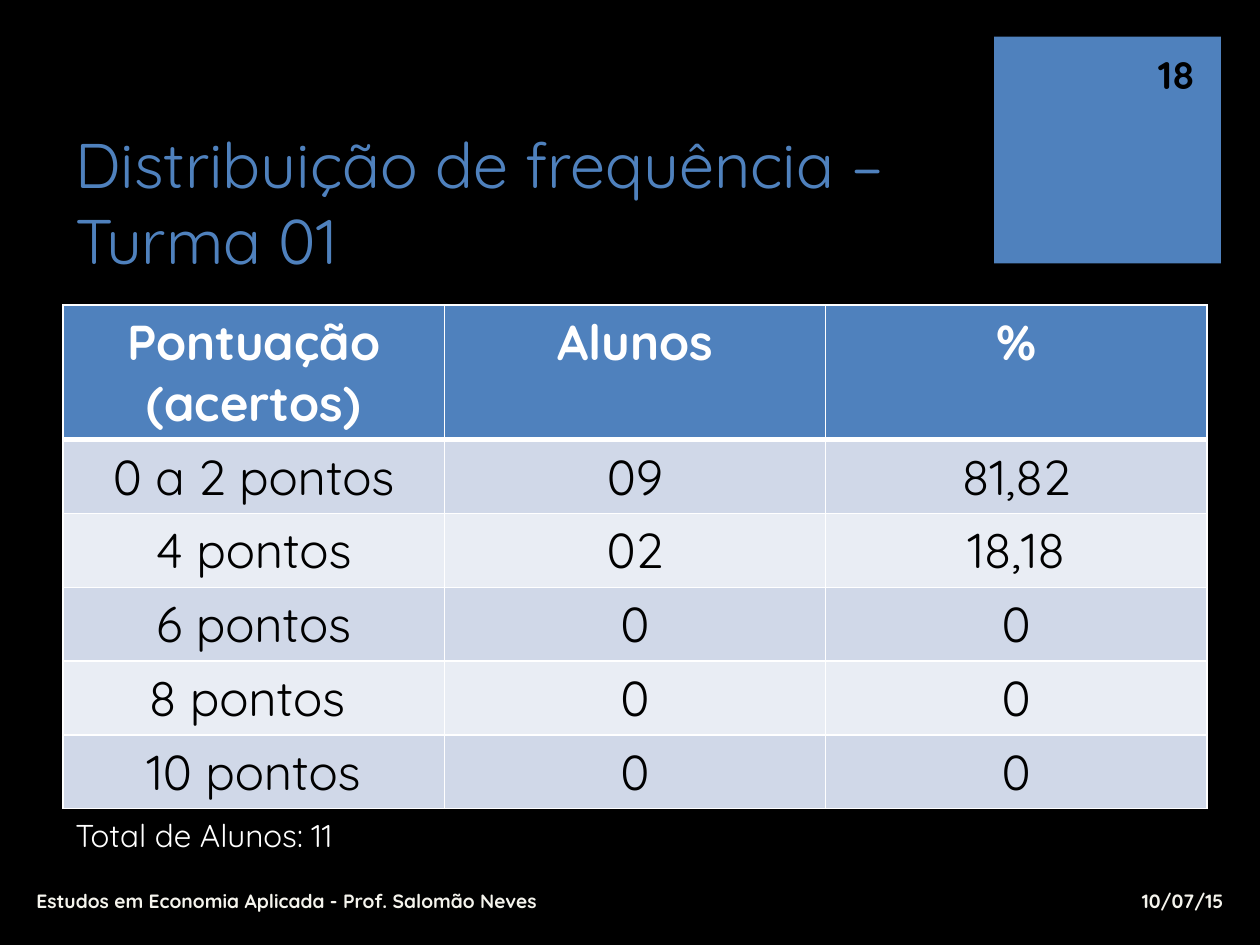
"""Build the slide with the frequency table of class 01."""
from lxml import etree
from pptx import Presentation
from pptx.dml.color import RGBColor
from pptx.enum.shapes import MSO_SHAPE
from pptx.enum.text import MSO_ANCHOR, MSO_AUTO_SIZE, PP_ALIGN
from pptx.oxml.ns import qn
from pptx.util import Inches, Pt

LEFT, MID, RIGHT = PP_ALIGN.LEFT, PP_ALIGN.CENTER, PP_ALIGN.RIGHT
TOP, CENTER, BOTTOM = MSO_ANCHOR.TOP, MSO_ANCHOR.MIDDLE, MSO_ANCHOR.BOTTOM
RECT, FIXED = MSO_SHAPE.RECTANGLE, MSO_AUTO_SIZE.NONE
FONT = "Quicksand"
BLUE, WHITE, BLACK, CREAM = "4F81BD", "FFFFFF", "000000", "F5F4ED"
BANDS = ["D0D8E8", "E9EDF4"]

TITLE = "Distribuição de frequência – Turma 01"
ROWS = [
    ("Pontuação (acertos)", "Alunos", "%"),
    ("0 a 2 pontos", "09", "81,82"),
    ("4 pontos", "02", "18,18"),
    ("6 pontos", "0", "0"),
    ("8 pontos ", "0", "0"),
    ("10 pontos", "0", "0"),
]
SMALL = dict(size=11, color=CREAM, bold=True, anchor=CENTER)
NOTES = [
    ("10/07/15", (7.89, 6.95, 1.92, 0.4), dict(SMALL, align=RIGHT)),
    ("Estudos em Economia Aplicada - Prof. Salomão Neves",
     (0.19, 6.95, 6.57, 0.4), SMALL),
    ("18", (9.03, 0.39, 0.55, 0.4),
     dict(SMALL, size=22, color=BLACK, align=RIGHT)),
    ("Total de Alunos: 11", (0.5, 6.43, 2.48, 0.4),
     dict(size=18, color=WHITE)),
]


def paint(fill, color):
    """Give a fill one solid colour."""
    fill.solid()
    fill.fore_color.rgb = RGBColor.from_string(color)


def write(frame, text, size=18, color=WHITE, bold=False, align=LEFT, anchor=TOP):
    """Write one formatted paragraph into a text frame."""
    frame.word_wrap = True
    frame.vertical_anchor = anchor
    para = frame.paragraphs[0]
    para.alignment = align
    run = para.add_run()
    run.text = text
    font = run.font
    font.name, font.size, font.bold = FONT, Pt(size), bold
    font.color.rgb = RGBColor.from_string(color)


def edge(cell, low, high):
    """Draw white borders around a cell, with widths for top and bottom."""
    props = cell._tc.get_or_add_tcPr()
    for spot, (side, width) in enumerate(zip("LRTB", (1, 1, high, low))):
        line = etree.Element(qn(f"a:ln{side}"), w=str(Pt(width)))
        solid = etree.SubElement(line, qn("a:solidFill"))
        etree.SubElement(solid, qn("a:srgbClr"), val=WHITE)
        props.insert(spot, line)


def add_grid(slide):
    """Add the frequency table."""
    place = [Inches(n) for n in (0.5, 2.42, 9.08, 3.87)]
    frame = slide.shapes.add_table(len(ROWS), len(ROWS[0]), *place)
    table = frame.table
    for r, row in enumerate(ROWS):
        table.rows[r].height = Inches(0.41)
        head = r == 0
        for c, text in enumerate(row):
            cell = table.cell(r, c)
            paint(cell.fill, BLUE if head else BANDS[(r - 1) % 2])
            edge(cell, low=3 if head else 1, high=3 if r == 1 else 1)
            write(cell.text_frame, text, size=28, bold=head, align=MID,
                  color=WHITE if head else BLACK)
    frame.height = place[3]


def main():
    """Build and save the slide."""
    deck = Presentation()
    deck.slide_width, deck.slide_height = Inches(10), Inches(7.5)
    slide = deck.slides.add_slide(deck.slide_layouts[5])
    paint(slide.background.fill, BLACK)

    title = slide.shapes.title
    title.left, title.top = Inches(0.5), Inches(1)
    title.width, title.height = Inches(7.12), Inches(1.25)
    title.text_frame.auto_size = FIXED
    write(title.text_frame, TITLE, size=36, color=BLUE, anchor=BOTTOM)

    block = slide.shapes.add_shape(
        RECT, *[Inches(n) for n in (7.89, 0.29, 1.8, 1.8)])
    block.shadow.inherit = False
    paint(block.fill, BLUE)
    block.line.fill.background()

    add_grid(slide)
    for text, place, style in NOTES:
        box = slide.shapes.add_textbox(*[Inches(n) for n in place])
        write(box.text_frame, text, **style)
    deck.save("out.pptx")


if __name__ == "__main__":
    main()
